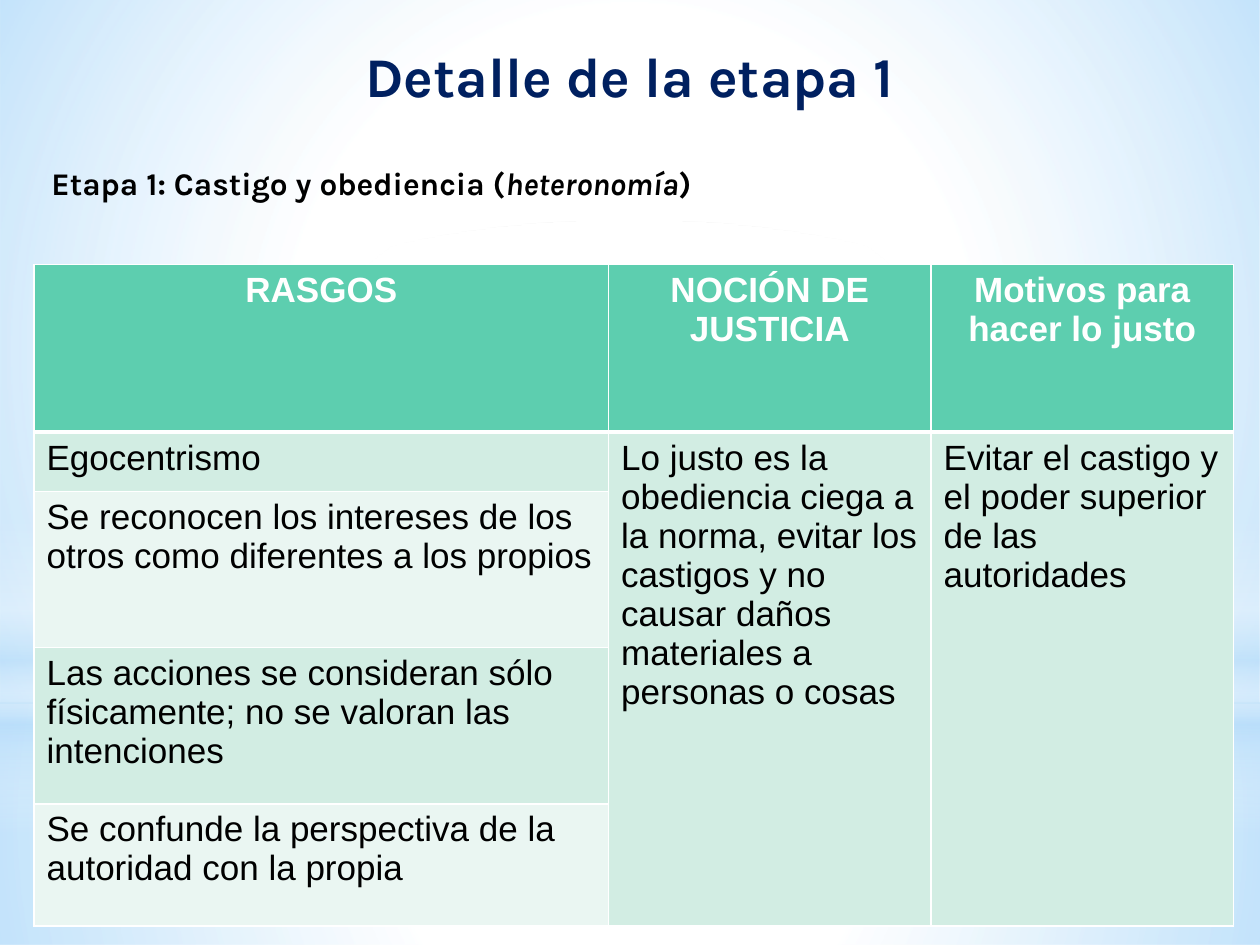
"""Build the slide that details stage 1 of moral development."""
import lxml.etree
import pptx
import pptx.dml.color
import pptx.enum.shapes
import pptx.enum.text
import pptx.oxml.ns
import pptx.util

Inches = pptx.util.Inches
Pt = pptx.util.Pt
RGBColor = pptx.dml.color.RGBColor
qn = pptx.oxml.ns.qn
SHAPES = pptx.enum.shapes.MSO_SHAPE
CENTER = pptx.enum.text.PP_ALIGN.CENTER

WHITE = RGBColor(0xFF, 0xFF, 0xFF)
BLACK = RGBColor(0x00, 0x00, 0x00)
NAVY = RGBColor(0x00, 0x20, 0x60)
SKY = RGBColor(0xB4, 0xDC, 0xFA)
GREEN = RGBColor(0x5D, 0xCE, 0xAF)
BANDS = (RGBColor(0xD2, 0xED, 0xE3), RGBColor(0xEA, 0xF6, 0xF2))

HEADERS = ("RASGOS", "NOCIÓN DE JUSTICIA", "Motivos para hacer lo justo")
TRAITS = (
    "Egocentrismo",
    "Se reconocen los intereses de los otros como diferentes a los propios",
    "Las acciones se consideran sólo físicamente; no se valoran las intenciones",
    "Se confunde la perspectiva de la autoridad con la propia",
)
JUSTICE = ("Lo justo es la obediencia ciega a la norma, evitar los castigos "
           "y no causar daños materiales a personas o cosas")
MOTIVES = "Evitar el castigo y el poder superior de las autoridades"
COLUMN_WIDTHS = (4.56, 2.56, 2.4)
ROW_HEIGHTS = (1.33, 0.47, 1.24, 1.24, 0.97)


def add_child(parent, tag, **attributes):
    """Append an XML child with the given attributes."""
    values = {name: str(value) for name, value in attributes.items()}
    return lxml.etree.SubElement(parent, qn(tag), values)


def add_color(parent, color, opacity=100):
    """Append an RGB colour with its opacity in percent."""
    rgb = add_child(parent, "a:srgbClr", val=color)
    if opacity < 100:
        add_child(rgb, "a:alpha", val=opacity * 1000)


def add_glow(slide, kind, top, height, stops, radial=True):
    """Add a full-width background shape with a translucent gradient."""
    glow = slide.shapes.add_shape(kind, 0, Inches(top), Inches(10), Inches(height))
    glow.shadow.inherit = False
    glow.line.fill.background()
    properties = glow.element.spPr
    gradient = add_child(properties, "a:gradFill", rotWithShape=1)
    stop_list = add_child(gradient, "a:gsLst")
    for position, color, opacity in stops:
        add_color(add_child(stop_list, "a:gs", pos=position * 1000), color, opacity)
    if radial:
        route = add_child(gradient, "a:path", path="circle")
        add_child(route, "a:fillToRect", l=50000, t=50000, r=50000, b=50000)
    else:
        add_child(gradient, "a:lin", ang=90 * 60000, scaled=0)
    properties.find(qn("a:prstGeom")).addnext(gradient)


def add_background(slide):
    """Layer the soft sky glows behind the content."""
    add_glow(slide, SHAPES.RECTANGLE, 5.58, 1.92,
             ((0, WHITE, 91), (37, WHITE, 76), (100, SKY, 79)))
    add_glow(slide, SHAPES.RECTANGLE, 0, 5.58,
             ((0, WHITE, 89), (48, WHITE, 62), (100, SKY, 79)))
    add_glow(slide, SHAPES.RECTANGLE, 4.12, 2.5,
             ((0, WHITE, 0), (29, WHITE, 30), (45, SKY, 40),
              (55, WHITE, 26), (65, SKY, 60), (100, WHITE, 0)), radial=False)
    add_glow(slide, SHAPES.OVAL, 1.75, 5.58, ((0, WHITE, 100), (56, WHITE, 0)))


def format_font(font, name, size, color, bold):
    """Set the typeface, size, colour and weight of a font."""
    font.name = name
    font.size = Pt(size)
    font.color.rgb = color
    font.bold = bold


def add_heading(slide, left, top, width, height, parts, size, color):
    """Add a bold line of text and return its paragraph."""
    heading = slide.shapes.add_textbox(
        Inches(left), Inches(top), Inches(width), Inches(height))
    heading.text_frame.word_wrap = True
    paragraph = heading.text_frame.paragraphs[0]
    for part in parts:
        run = paragraph.add_run()
        run.text = part
        format_font(run.font, "Karla", size, color, True)
    return paragraph


def set_borders(cell, bottom):
    """Draw white cell borders, with the bottom width given in points."""
    properties = cell._tc.get_or_add_tcPr()
    for index, (side, width) in enumerate(
            (("L", 1), ("R", 1), ("T", 1), ("B", bottom))):
        border = add_child(properties, "a:ln" + side, w=Pt(width))
        add_color(add_child(border, "a:solidFill"), WHITE)
        properties.insert(index, border)


def fill_cell(cell, text, fill, header=False):
    """Write and style one table cell."""
    cell.fill.solid()
    cell.fill.fore_color.rgb = fill
    set_borders(cell, 3 if header else 1)
    cell.text_frame.text = text
    paragraph = cell.text_frame.paragraphs[0]
    if header:
        paragraph.alignment = CENTER
    for run in paragraph.runs:
        format_font(run.font, "Arial", 20, WHITE if header else BLACK, header)


def add_stage_table(slide):
    """Add the table of traits, notion of justice and motives."""
    table = slide.shapes.add_table(
        len(ROW_HEIGHTS), len(COLUMN_WIDTHS), Inches(0.27), Inches(2.1),
        Inches(sum(COLUMN_WIDTHS)), Inches(sum(ROW_HEIGHTS))).table
    for column, width in zip(table.columns, COLUMN_WIDTHS):
        column.width = Inches(width)
    for row, height in zip(table.rows, ROW_HEIGHTS):
        row.height = Inches(height)
    for column in (1, 2):
        table.cell(1, column).merge(table.cell(len(TRAITS), column))
    for column, header in enumerate(HEADERS):
        fill_cell(table.cell(0, column), header, GREEN, header=True)
    for index, trait in enumerate(TRAITS):
        first = index == 0
        texts = (trait, JUSTICE if first else "", MOTIVES if first else "")
        for column, text in enumerate(texts):
            band = BANDS[index % 2] if column == 0 else BANDS[0]
            fill_cell(table.cell(index + 1, column), text, band)


def main():
    """Build and save the slide."""
    deck = pptx.Presentation()
    deck.slide_width, deck.slide_height = Inches(10), Inches(7.5)
    slide = deck.slides.add_slide(deck.slide_layouts[6])
    slide.background.fill.solid()
    slide.background.fill.fore_color.rgb = WHITE
    add_background(slide)
    add_stage_table(slide)
    title = add_heading(slide, 0, 0.28, 10, 0.64,
                        ("Detalle de la etapa 1",), 32, NAVY)
    title.alignment = CENTER
    stage = add_heading(slide, 0.31, 1.25, 9.38, 0.51,
                        ("Etapa 1: Castigo y obediencia (", "heteronomía", ")"),
                        18, BLACK)
    stage.runs[1].font.italic = True
    deck.save("out.pptx")


if __name__ == "__main__":
    main()
